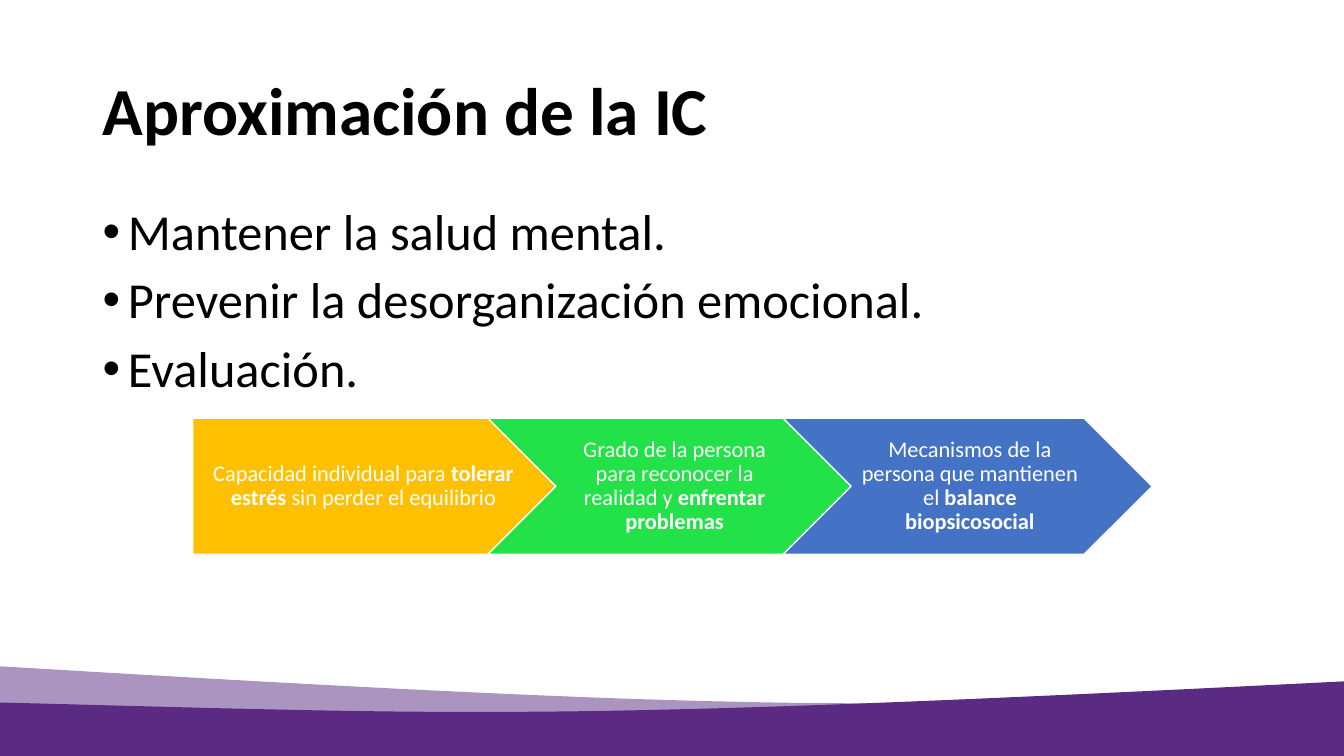
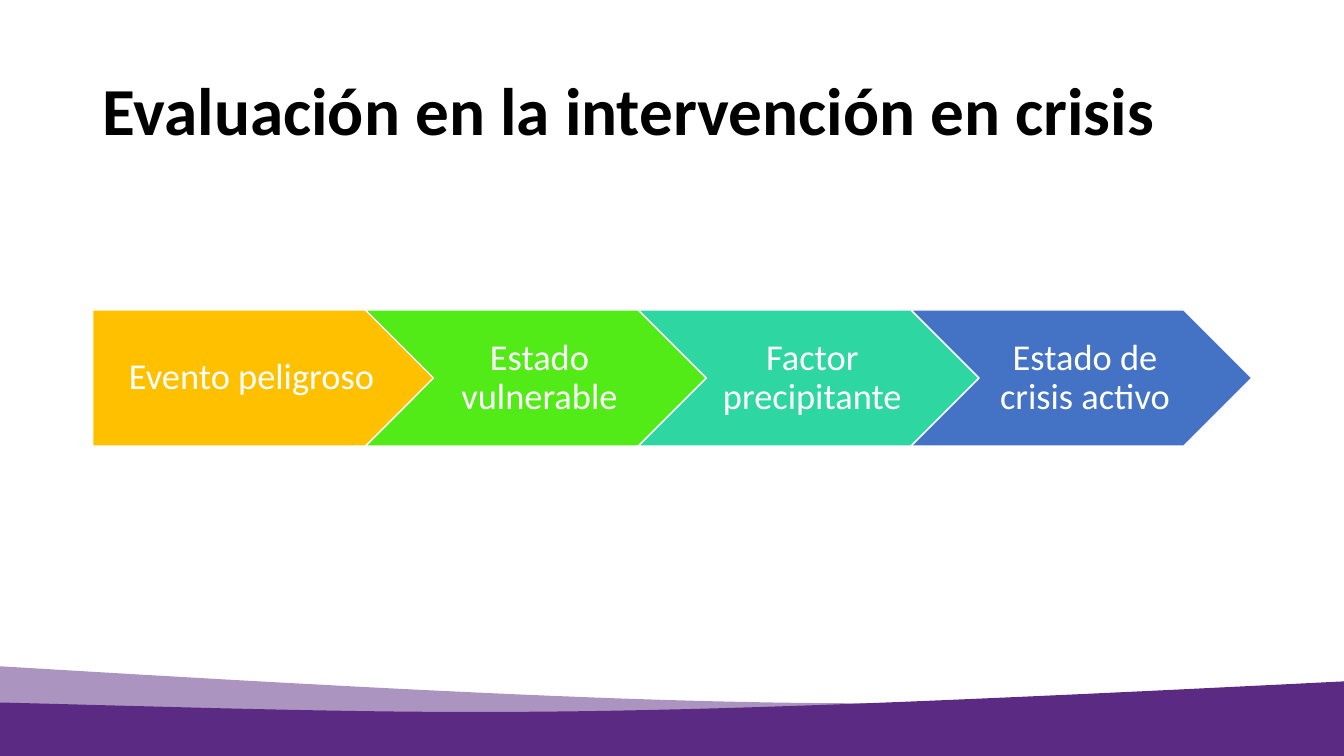
import pptx
import pptx.util
import pptx.dml.color
import pptx.enum.shapes
import pptx.enum.text
import pptx.oxml
import pptx.oxml.ns

SLIDE_WIDTH, SLIDE_HEIGHT = pptx.util.Inches(13.33), pptx.util.Inches(7.5)
FONT = "Calibri"
BLACK, WHITE, PURPLE = "000000", "FFFFFF", "5B2A83"
AMBER, GREEN, LIME, TEAL, BLUE = "FFC000", "23E148", "53EB17", "2ED7A1", "4472C4"
MARGIN, CONTENT_WIDTH = 6.9, 86.25
STEP_HEIGHT, STEP_PITCH = 18, 0.8
CURVE_STEPS = 40
WAVES = [
    ([(100, 91.6), (64.8, 93.47), (59.56, 94.53), (0, 88.13)], 50),
    ([(0, 92.93), (35.26, 94.53), (40.51, 95.47), (100, 90.13)], 100),
]
ALIGN = pptx.enum.text.PP_ALIGN
ANCHOR = pptx.enum.text.MSO_ANCHOR
PRESET = pptx.enum.shapes.MSO_SHAPE


def across(percent):
    return round(SLIDE_WIDTH * percent / 100)


def down(percent):
    return round(SLIDE_HEIGHT * percent / 100)


def rgb(code):
    return pptx.dml.color.RGBColor.from_string(code)


def apply(target, formats):
    for attribute, value in formats.items():
        setattr(target, attribute, value)


def paint(shape, color, outline=None):
    shape.shadow.inherit = False
    shape.fill.solid()
    shape.fill.fore_color.rgb = rgb(color)
    if outline:
        shape.line.color.rgb = rgb(outline)
        shape.line.width = pptx.util.Pt(1)
    else:
        shape.line.fill.background()


def write(paragraph, parts, size, color, align=ALIGN.LEFT, bold=False):
    apply(paragraph, {"alignment": align, "line_spacing": 0.9})
    for part, emphasis in parts:
        run = paragraph.add_run()
        run.text = part
        apply(run.font, {"name": FONT, "size": pptx.util.Pt(size), "bold": bold or emphasis})
        run.font.color.rgb = rgb(color)


def curve(controls):
    for step in range(CURVE_STEPS + 1):
        t = step / CURVE_STEPS
        weights = [(1 - t) ** 3, 3 * t * (1 - t) ** 2, 3 * t * t * (1 - t), t ** 3]
        yield tuple(sum(w * c[axis] for w, c in zip(weights, controls)) for axis in (0, 1))


def add_wave(slide, controls, opacity):
    outline = [*curve(controls), (controls[-1][0], 100), (controls[0][0], 100)]
    points = [(across(x), down(y)) for x, y in outline]
    builder = slide.shapes.build_freeform(*points[0])
    builder.add_line_segments(points[1:], close=True)
    wave = builder.convert_to_shape()
    paint(wave, PURPLE)
    if opacity < 100:
        for tint in wave.element.iter(pptx.oxml.ns.qn("a:srgbClr")):
            alpha = pptx.oxml.parse_xml(f'<a:alpha {pptx.oxml.ns.nsdecls("a")} val="{opacity * 1000}"/>')
            tint.append(alpha)
    return wave


def share_waves(slide):
    tree = slide.slide_layout.shapes.element
    for position, (controls, opacity) in enumerate(WAVES, start=2):
        tree.insert(position, add_wave(slide, controls, opacity).element)


def add_title(slide, heading):
    title = slide.shapes.title
    apply(title, {"left": across(MARGIN), "top": down(5.33),
                  "width": across(CONTENT_WIDTH), "height": down(19.33)})
    apply(title.text_frame, {"vertical_anchor": ANCHOR.MIDDLE, "word_wrap": True,
                             "auto_size": pptx.enum.text.MSO_AUTO_SIZE.NONE})
    write(title.text_frame.paragraphs[0], [(heading, False)], 48, BLACK, bold=True)


def add_bullets(slide, goals):
    box = slide.shapes.add_textbox(across(MARGIN), down(26.67), across(CONTENT_WIDTH), down(28))
    frame = box.text_frame
    frame.word_wrap = True
    indent = pptx.util.Inches(0.25)
    for index, goal in enumerate(goals):
        paragraph = frame.add_paragraph() if index else frame.paragraphs[0]
        if index:
            paragraph.space_before = pptx.util.Pt(10)
        properties = paragraph._p.get_or_add_pPr()
        apply_indent = {"marL": indent, "indent": -indent}
        for attribute, value in apply_indent.items():
            properties.set(attribute, str(value))
        for tag in ('buFont typeface="Arial"', 'buChar char="•"'):
            name, setting = tag.split(" ")
            properties.append(pptx.oxml.parse_xml(
                f'<a:{name} {pptx.oxml.ns.nsdecls("a")} {setting}/>'))
        write(paragraph, [(goal, False)], 36, BLACK)


def add_process(slide, left, top, width, size, steps):
    step_width = width / (1 + STEP_PITCH * (len(steps) - 1))
    for index, (color, parts) in enumerate(steps):
        preset, lead = (PRESET.CHEVRON, 0.3) if index else (PRESET.PENTAGON, 0.4)
        step = slide.shapes.add_shape(
            preset, across(left + index * step_width * STEP_PITCH), down(top),
            across(step_width), down(STEP_HEIGHT))
        paint(step, color, WHITE)
        margins = {"margin_left": lead, "margin_right": 0.1, "margin_top": 0.2, "margin_bottom": 0.2}
        apply(step.text_frame, {side: pptx.util.Pt(size * share) for side, share in margins.items()})
        apply(step.text_frame, {"word_wrap": True, "vertical_anchor": ANCHOR.MIDDLE})
        write(step.text_frame.paragraphs[0], parts, size, WHITE, ALIGN.CENTER)


def main():
    deck = pptx.Presentation()
    apply(deck, {"slide_width": SLIDE_WIDTH, "slide_height": SLIDE_HEIGHT})
    title_only = deck.slide_layouts[5]

    approach = deck.slides.add_slide(title_only)
    share_waves(approach)
    add_title(approach, "Aproximación de la IC")
    add_bullets(approach, ["Mantener la salud mental.",
                           "Prevenir la desorganización emocional.",
                           "Evaluación."])
    add_process(approach, 14.33, 55.33, 71.4, 16, [
        (AMBER, [("Capacidad individual para ", False), ("tolerar estrés", True),
                 (" sin perder el equilibrio", False)]),
        (GREEN, [("Grado de la persona para reconocer la realidad y ", False),
                 ("enfrentar problemas", True)]),
        (BLUE, [("Mecanismos de la persona que mantienen el ", False),
                ("balance biopsicosocial", True)]),
    ])

    evaluation = deck.slides.add_slide(title_only)
    add_title(evaluation, "Evaluación en la intervención en crisis")
    add_process(evaluation, MARGIN, 41, CONTENT_WIDTH, 26, [
        (AMBER, [("Evento peligroso", False)]),
        (LIME, [("Estado vulnerable", False)]),
        (TEAL, [("Factor precipitante", False)]),
        (BLUE, [("Estado de crisis activo", False)]),
    ])
    deck.save("out.pptx")


if __name__ == "__main__":
    main()
